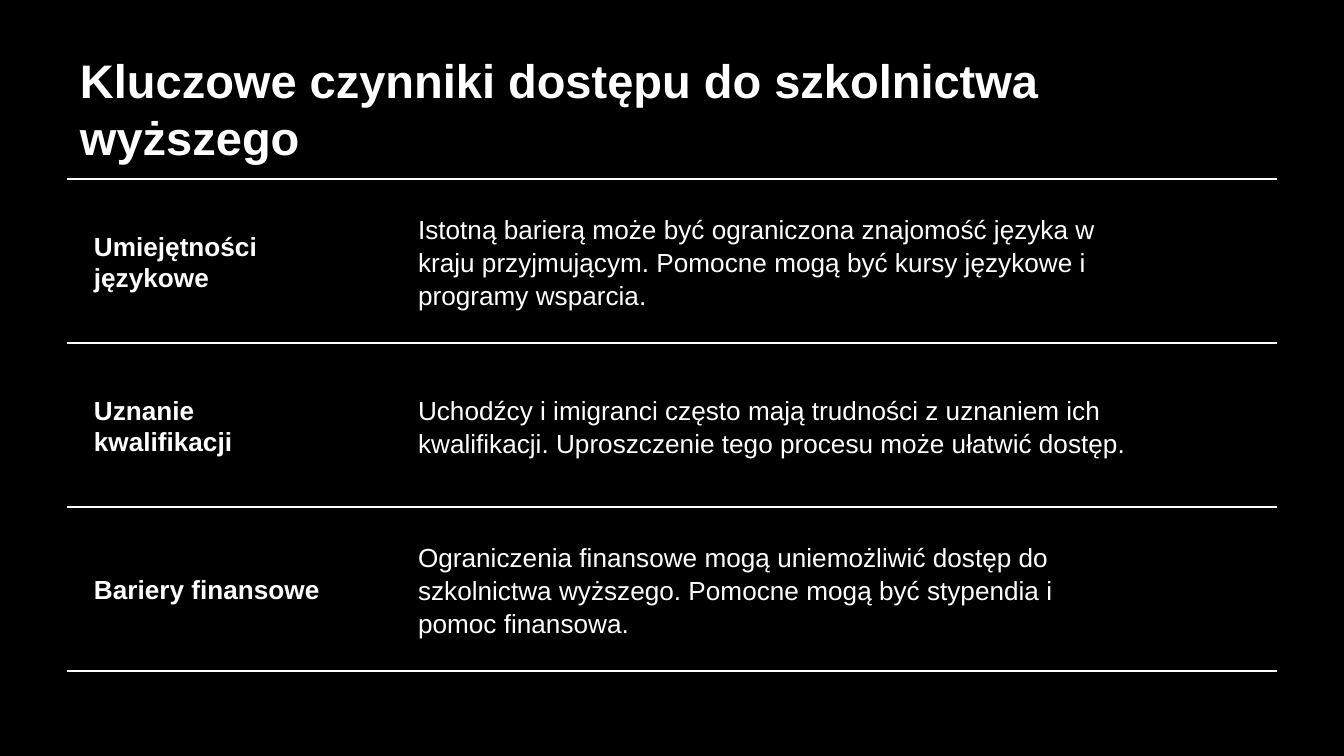
from lxml import etree
from pptx import Presentation
from pptx.dml.color import RGBColor
from pptx.enum.text import MSO_ANCHOR
from pptx.oxml.ns import qn
from pptx.util import Emu, Pt

MIDDLE = MSO_ANCHOR.MIDDLE
EMU_PER_PX = 914400 / 134.4
BLACK = "000000"
WHITE = "FFFFFF"

FACTORS = [
    ("Umiejętności językowe",
     "Istotną barierą może być ograniczona znajomość języka w kraju przyjmującym. "
     "Pomocne mogą być kursy językowe i programy wsparcia."),
    ("Uznanie kwalifikacji",
     "Uchodźcy i imigranci często mają trudności z uznaniem ich kwalifikacji. "
     "Uproszczenie tego procesu może ułatwić dostęp."),
    ("Bariery finansowe",
     "Ograniczenia finansowe mogą uniemożliwić dostęp do szkolnictwa wyższego. "
     "Pomocne mogą być stypendia i pomoc finansowa."),
]


def px(length):
    return Emu(round(length * EMU_PER_PX))


def color(hex_string):
    return RGBColor.from_string(hex_string)


class SlideBuilder:
    font = "Arial"
    ink = WHITE
    inset = 13
    rule_width = Pt(1.5)

    def __init__(self, slide, background):
        self.slide = slide
        fill = slide.background.fill
        fill.solid()
        fill.fore_color.rgb = color(background)

    def text(self, left, top, width, height, wording, size=14, bold=False,
             left_inset=inset, line_spacing=1.0):
        box = self.slide.shapes.add_textbox(px(left), px(top), px(width), px(height))
        frame = box.text_frame
        frame.word_wrap = True
        frame.vertical_anchor = MIDDLE
        frame.margin_left = px(left_inset)
        frame.margin_right = frame.margin_top = frame.margin_bottom = px(self.inset)
        frame.text = wording
        paragraph = frame.paragraphs[0]
        paragraph.line_spacing = line_spacing
        font = paragraph.runs[0].font
        font.name = self.font
        font.size = Pt(size)
        font.bold = bold
        font.color.rgb = color(self.ink)

    def ruled_table(self, left, top, column_widths, row_height, row_count):
        table = self.slide.shapes.add_table(
            row_count, len(column_widths), px(left), px(top),
            px(sum(column_widths)), px(row_height * row_count)).table
        table.first_row = False
        table.horz_banding = False
        for column, width in zip(table.columns, column_widths):
            column.width = px(width)
        for row in table.rows:
            row.height = px(row_height)
            for cell in row.cells:
                self.cell_rules(cell)
                cell.fill.background()

    def cell_rules(self, cell):
        properties = cell._tc.get_or_add_tcPr()
        for side in ("L", "R", "T", "B"):
            border = etree.SubElement(properties, qn(f"a:ln{side}"))
            if side in "LR":
                etree.SubElement(border, qn("a:noFill"))
            else:
                border.set("w", str(self.rule_width))
                fill = etree.SubElement(border, qn("a:solidFill"))
                etree.SubElement(fill, qn("a:srgbClr"), val=self.ink)


def main():
    presentation = Presentation()
    presentation.slide_width = px(1344)
    presentation.slide_height = px(756)
    slide = presentation.slides.add_slide(presentation.slide_layouts[6])
    builder = SlideBuilder(slide, BLACK)

    margin, table_top, row_height = 67, 179, 164
    text_height = 145
    text_offset = (row_height - text_height) // 2 + 1

    builder.ruled_table(margin, table_top, (305, 905), row_height, len(FACTORS))
    builder.text(margin, 66, 1210, 85,
                 "Kluczowe czynniki dostępu do szkolnictwa wyższego",
                 size=25.2, bold=True)
    for index, (factor, explanation) in enumerate(FACTORS):
        top = table_top + index * row_height + text_offset
        builder.text(margin, top, 269, text_height, factor, bold=True, left_inset=27)
        builder.text(405, top, 738, text_height, explanation, line_spacing=1.05)

    presentation.save("out.pptx")


if __name__ == "__main__":
    main()
